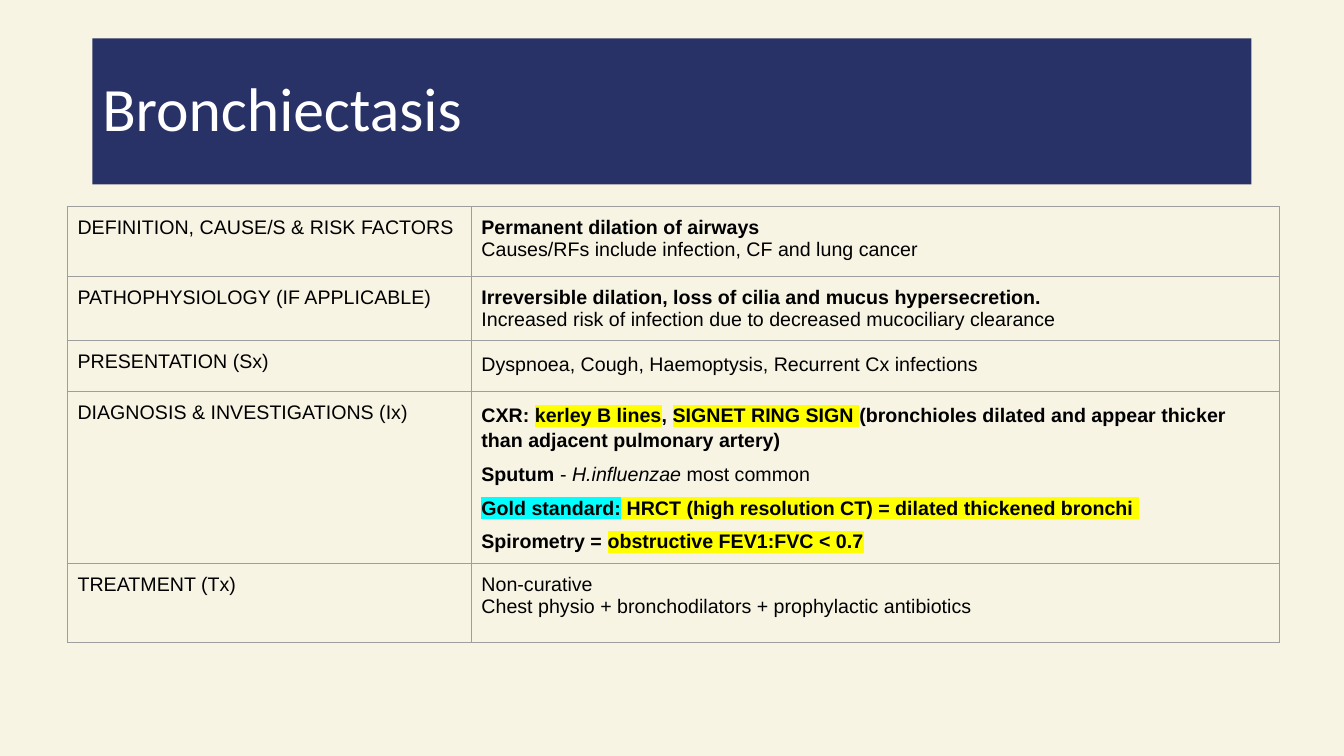
from lxml.etree import SubElement
from pptx import Presentation
from pptx.dml.color import RGBColor
from pptx.enum.shapes import MSO_SHAPE
from pptx.enum.text import MSO_ANCHOR, PP_ALIGN
from pptx.oxml.ns import qn
from pptx.util import Pt

COLORS = {
    "background": "F8F4E4",
    "banner": "293267",
    "title": "FFFFFF",
    "text": "000000",
    "border": "9E9E9E",
    "yellow": "FFFF00",
    "cyan": "00FFFF",
}
COLUMN_WIDTHS = [288.5, 577]
ROW_HEIGHTS = [49.7, 46.1, 36, 101.5, 56.9]
SPACED_ROWS = {"PRESENTATION (Sx)", "DIAGNOSIS & INVESTIGATIONS (Ix)"}

# Each run is (text, style), where style holds "bold", "italic" or a highlight colour.
ROWS = [
    ("DEFINITION, CAUSE/S & RISK FACTORS", [
        [("Permanent dilation of airways", "bold")],
        [("Causes/RFs include infection, CF and lung cancer", "")],
    ]),
    ("PATHOPHYSIOLOGY (IF APPLICABLE)", [
        [("Irreversible dilation, loss of cilia and mucus hypersecretion.", "bold")],
        [("Increased risk of infection due to decreased mucociliary clearance", "")],
    ]),
    ("PRESENTATION (Sx)", [
        [("Dyspnoea, Cough, Haemoptysis, Recurrent Cx infections", "")],
    ]),
    ("DIAGNOSIS & INVESTIGATIONS (Ix)", [
        [("CXR: ", "bold"), ("kerley B lines", "bold yellow"), (", ", "bold"),
         ("SIGNET RING SIGN ", "bold yellow"),
         ("(bronchioles dilated and appear thicker than adjacent pulmonary artery)", "bold")],
        [("Sputum ", "bold"), ("- ", ""), ("H.influenzae", "italic"), (" most common", "")],
        [("Gold standard:", "bold cyan"),
         (" HRCT (high resolution CT) = dilated thickened bronchi ", "bold yellow")],
        [("Spirometry = ", "bold"), ("obstructive FEV1:FVC < 0.7", "bold yellow")],
    ]),
    ("TREATMENT (Tx)", [
        [("Non-curative", "")],
        [("Chest physio + bronchodilators + prophylactic antibiotics", "")],
    ]),
]


def color(name):
    """Return the named colour."""
    return RGBColor.from_string(COLORS[name])


def format_font(font, name, size, color_name):
    """Set the typeface, size and colour of a font."""
    font.name = name
    font.size = Pt(size)
    font.color.rgb = color(color_name)


def highlight(run, color_name):
    """Mark a run with a background colour."""
    properties = run.font._element
    marker = SubElement(properties, qn("a:highlight"))
    SubElement(marker, qn("a:srgbClr"), val=COLORS[color_name])
    properties.find(qn("a:solidFill")).addnext(marker)


def add_borders(cell):
    """Draw a thin line on all four sides of a cell."""
    properties = cell._tc.get_or_add_tcPr()
    for side in ("lnL", "lnR", "lnT", "lnB"):
        line = SubElement(properties, qn(f"a:{side}"), w=str(Pt(0.75)))
        fill = SubElement(line, qn("a:solidFill"))
        SubElement(fill, qn("a:srgbClr"), val=COLORS["border"])


def fill_cell(cell, lines, spaced):
    """Write lines of styled runs into a bordered, unfilled cell."""
    cell.margin_left = cell.margin_right = Pt(7.2)
    cell.margin_top = cell.margin_bottom = Pt(7.2)
    cell.vertical_anchor = MSO_ANCHOR.TOP
    add_borders(cell)
    cell.fill.background()
    text_frame = cell.text_frame
    for index, line in enumerate(lines):
        paragraph = text_frame.add_paragraph() if index else text_frame.paragraphs[0]
        if spaced:
            paragraph.line_spacing = 1.15
            paragraph.space_before = Pt(6)
        for text, style in line:
            run = paragraph.add_run()
            run.text = text
            format_font(run.font, "Arial", 14, "text")
            run.font.bold = "bold" in style
            run.font.italic = "italic" in style
            for marker in ("yellow", "cyan"):
                if marker in style:
                    highlight(run, marker)


def add_banner(slide, title, left, top, width, height):
    """Place the title on a solid banner."""
    shape = slide.shapes.add_shape(
        MSO_SHAPE.RECTANGLE, Pt(left), Pt(top), Pt(width), Pt(height))
    shape.shadow.inherit = False
    shape.fill.solid()
    shape.fill.fore_color.rgb = color("banner")
    shape.line.fill.background()
    text_frame = shape.text_frame
    text_frame.text = title
    text_frame.word_wrap = True
    text_frame.vertical_anchor = MSO_ANCHOR.MIDDLE
    paragraph = text_frame.paragraphs[0]
    paragraph.alignment = PP_ALIGN.LEFT
    paragraph.line_spacing = 0.9
    format_font(paragraph.runs[0].font, "Calibri", 44, "title")


def add_summary_table(slide, left, top):
    """Place the two-column table of headings and findings."""
    table = slide.shapes.add_table(
        len(ROWS), len(COLUMN_WIDTHS), Pt(left), Pt(top),
        Pt(sum(COLUMN_WIDTHS)), Pt(sum(ROW_HEIGHTS))).table
    table.first_row = False
    table.horz_banding = False
    for column, width in zip(table.columns, COLUMN_WIDTHS):
        column.width = Pt(width)
    for row, height, (heading, lines) in zip(table.rows, ROW_HEIGHTS, ROWS):
        row.height = Pt(height)
        fill_cell(row.cells[0], [[(heading, "")]], False)
        fill_cell(row.cells[1], lines, heading in SPACED_ROWS)


def main():
    """Build and save the slide."""
    presentation = Presentation()
    presentation.slide_width = Pt(960)
    presentation.slide_height = Pt(540)
    slide = presentation.slides.add_slide(presentation.slide_layouts[6])
    slide.background.fill.solid()
    slide.background.fill.fore_color.rgb = color("background")
    add_banner(slide, "Bronchiectasis", 66, 27.4, 828, 104.4)
    add_summary_table(slide, 48.2, 147.6)
    presentation.save("out.pptx")


if __name__ == "__main__":
    main()
